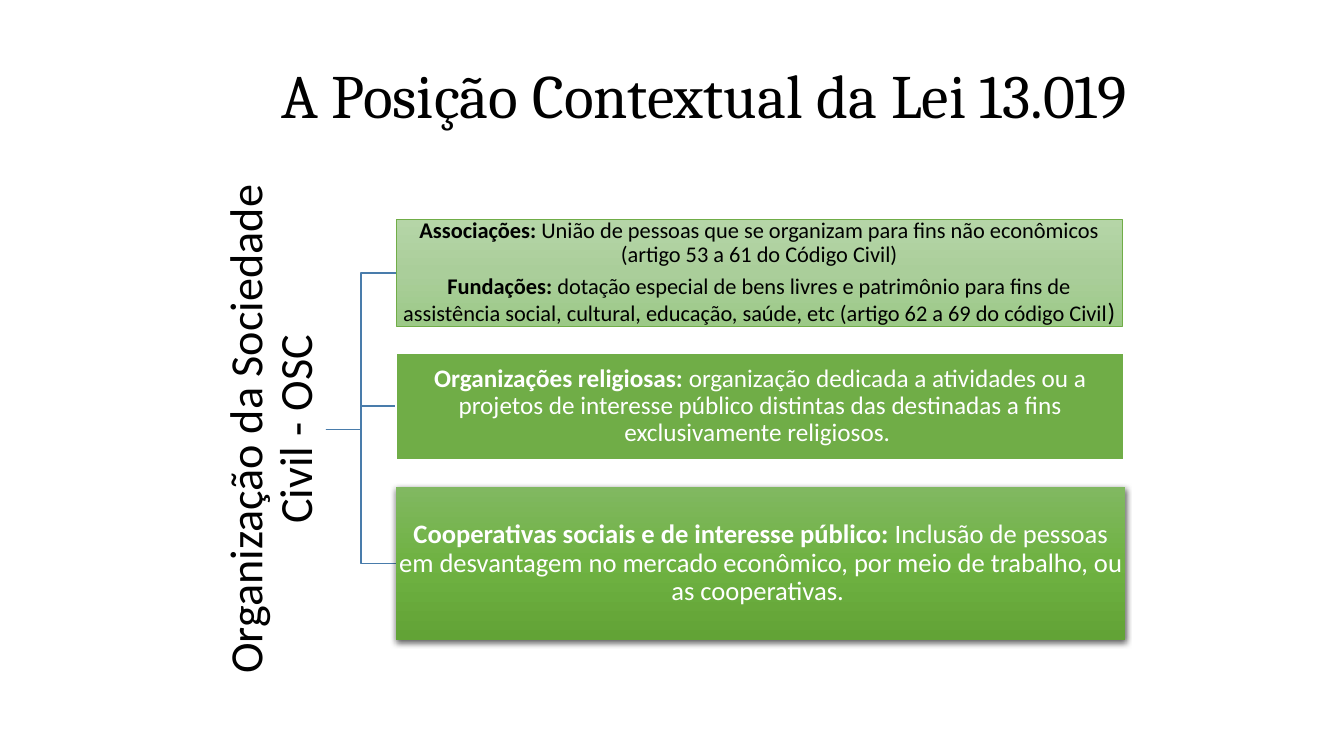
from copy import deepcopy
from dataclasses import dataclass

from lxml import etree
from pptx import Presentation
from pptx.dml.color import RGBColor as RGB
from pptx.enum.shapes import MSO_SHAPE as SHAPE
from pptx.enum.text import MSO_ANCHOR as ANCHOR, PP_ALIGN as ALIGN
from pptx.oxml.ns import qn
from pptx.util import Inches, Pt


@dataclass(frozen=True)
class Theme:
    heading_font: str = "Cambria"
    body_font: str = "Calibri"
    black: str = "000000"
    white: str = "FFFFFF"
    green: str = "70AD47"
    branch: str = "497CAB"
    pale_gradient: tuple = ("B5D5A7", "AACE9A", "9CC987")
    deep_gradient: tuple = ("81B861", "6FB242", "62A336")
    title_size: int = 44
    root_size: int = 33
    small_size: int = 16
    medium_size: int = 18
    large_size: int = 19


class Diagram:
    def __init__(self, slide, theme):
        self.slide = slide
        self.theme = theme

    def set_text(self, sp, paragraphs, size, color, font, align=ALIGN.CENTER, inset=0.01):
        """Each paragraph is a list of (text, bold, size override or None)."""
        tf = sp.text_frame
        tf.word_wrap = True
        tf.vertical_anchor = ANCHOR.MIDDLE
        tf.margin_left = tf.margin_right = Inches(inset)
        tf.margin_top = tf.margin_bottom = Inches(inset)
        for i, runs in enumerate(paragraphs):
            p = tf.add_paragraph() if i else tf.paragraphs[0]
            p.alignment = align
            p.line_spacing = 0.9
            if i:
                p.space_before = Pt(5.5)
            for text, bold, run_size in runs:
                r = p.add_run()
                r.text = text
                r.font.name = font
                r.font.size = Pt(run_size or size)
                r.font.bold = bold
                r.font.color.rgb = RGB.from_string(color)

    def label(self, box, text, size, font, rotation=0, **layout):
        sp = self.slide.shapes.add_textbox(*map(Inches, box))
        sp.rotation = rotation
        self.set_text(sp, [[(text, False, None)]], size, self.theme.black, font, **layout)

    def branch(self, start, end):
        """Draw an elbow that turns halfway between start and end."""
        (x1, y1), (x2, y2) = start, end
        middle = (x1 + x2) / 2
        points = [(Inches(x), Inches(y)) for x, y in ((middle, y1), (middle, y2), (x2, y2))]
        builder = self.slide.shapes.build_freeform(Inches(x1), Inches(y1))
        builder.add_line_segments(points, close=False)
        sp = builder.convert_to_shape()
        sp.shadow.inherit = False
        sp.fill.background()
        sp.line.color.rgb = RGB.from_string(self.theme.branch)
        sp.line.width = Pt(1)

    def panel(self, box, paragraphs, size, color, fill, line=None, shadow=False):
        sp = self.slide.shapes.add_shape(SHAPE.RECTANGLE, *map(Inches, box))
        sp.shadow.inherit = False
        if isinstance(fill, tuple):
            self.shade(sp, fill)
        else:
            sp.fill.solid()
            sp.fill.fore_color.rgb = RGB.from_string(fill)
        if line:
            line_color, width = line
            sp.line.color.rgb = RGB.from_string(line_color)
            sp.line.width = Pt(width)
        else:
            sp.line.fill.background()
        if shadow:
            self.drop_shadow(sp)
        self.set_text(sp, paragraphs, size, color, self.theme.body_font)

    def shade(self, sp, colors):
        """Fill from top to bottom with three evenly spaced colours."""
        sp.fill.gradient()
        sp.fill.gradient_angle = 270
        stops = sp._element.spPr.find(qn("a:gradFill")).find(qn("a:gsLst"))
        stops.insert(1, deepcopy(stops[0]))
        for i, (stop, color) in enumerate(zip(sp.fill.gradient_stops, colors)):
            stop.position = i / 2
            stop.color.rgb = RGB.from_string(color)

    def drop_shadow(self, sp):
        effects = sp._element.spPr.find(qn("a:effectLst"))
        outer = etree.SubElement(effects, qn("a:outerShdw"), blurRad=str(Pt(4.5)),
                                 dist=str(Pt(1.5)), dir="5400000", algn="ctr", rotWithShape="0")
        color = etree.SubElement(outer, qn("a:srgbClr"), val=self.theme.black)
        etree.SubElement(color, qn("a:alpha"), val="63000")


def main():
    prs = Presentation()
    prs.slide_width, prs.slide_height = Inches(13.33), Inches(7.5)
    theme = Theme()
    diagram = Diagram(prs.slides.add_slide(prs.slide_layouts[6]), theme)

    diagram.label((2.69, 0.25, 11.5, 1.45), "A Posição Contextual da Lei 13.019",
                  theme.title_size, theme.heading_font, align=ALIGN.LEFT, inset=0.1)

    root, panel_left = (3.23, 4.26), 3.93
    panels = [
        dict(top=2.18, width=7.2, height=1.06, size=theme.small_size, color=theme.black,
             fill=theme.pale_gradient, line=(theme.green, 0.5), paragraphs=[
                 [("Associações: ", True, None),
                  ("União de pessoas que se organizam para fins não econômicos "
                   "(artigo 53 a 61 do Código Civil)", False, None)],
                 [("Fundações: ", True, None),
                  ("dotação especial de bens livres e patrimônio para fins de assistência social, "
                   "cultural, educação, saúde, etc (artigo 62 a 69 do código Civil", False, None),
                  (")", False, theme.medium_size)]]),
        dict(top=3.5, width=7.22, height=1.06, size=theme.medium_size, color=theme.white,
             fill=theme.green, line=(theme.white, 1.5), paragraphs=[
                 [("Organizações religiosas: ", True, None),
                  ("organização dedicada a atividades ou a projetos de interesse público distintas "
                   "das destinadas a fins exclusivamente religiosos. ", False, None)]]),
        dict(top=4.83, width=7.23, height=1.52, size=theme.large_size, color=theme.white,
             fill=theme.deep_gradient, shadow=True, paragraphs=[
                 [("Cooperativas sociais e de interesse público: ", True, None),
                  ("Inclusão de pessoas em desvantagem no mercado econômico, por meio de trabalho, "
                   "ou as cooperativas. ", False, None)]]),
    ]

    for panel in reversed(panels):
        diagram.branch(root, (panel_left, panel["top"] + panel["height"] / 2))
    diagram.label((-0.09, 3.73, 5.58, 1.06), "Organização da Sociedade Civil - OSC",
                  theme.root_size, theme.body_font, rotation=270, inset=0.02)
    for panel in panels:
        box = (panel_left, panel.pop("top"), panel.pop("width"), panel.pop("height"))
        diagram.panel(box, **panel)

    prs.save("out.pptx")


if __name__ == "__main__":
    main()
